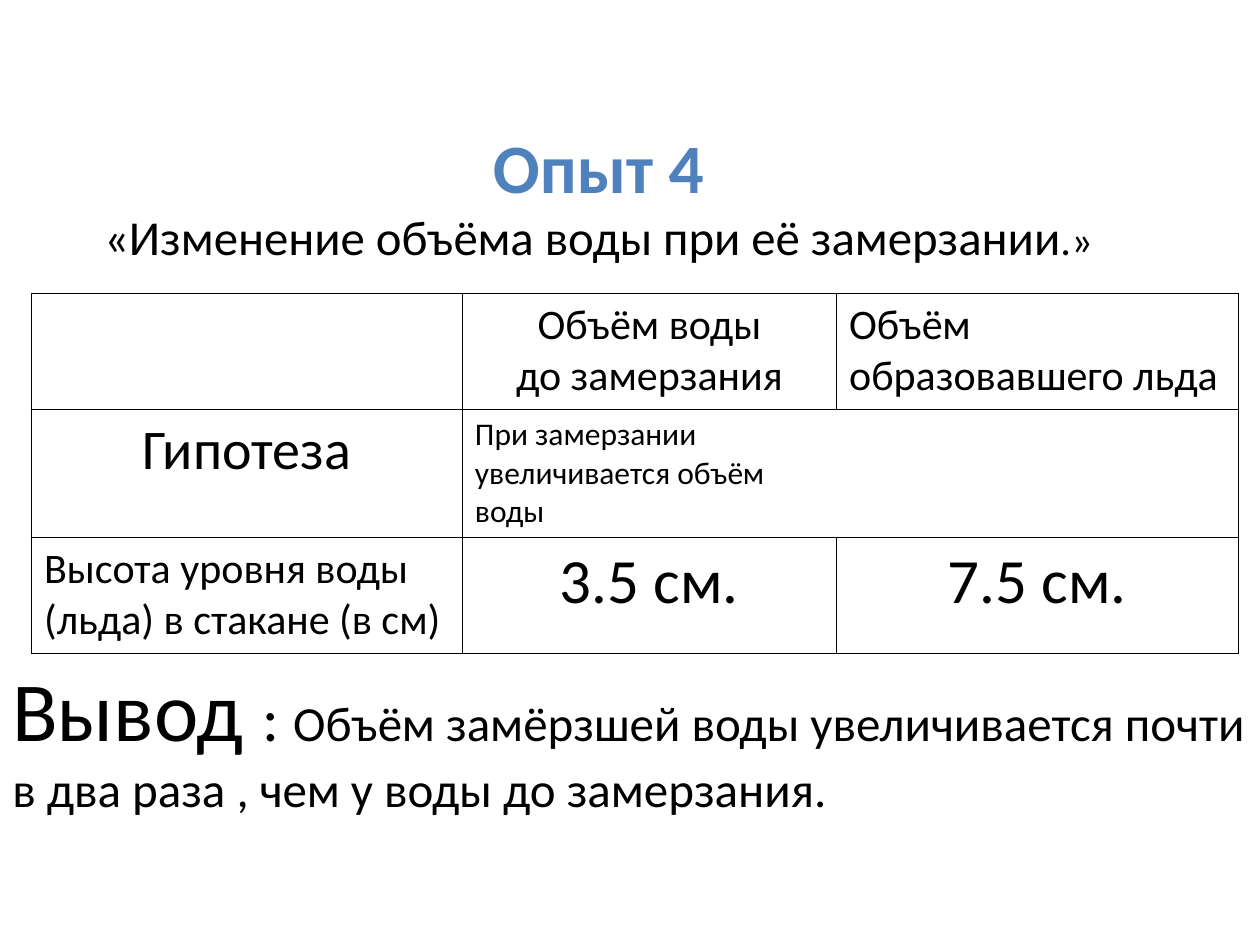
from lxml import etree
from pptx import Presentation
from pptx import util as u
from pptx.dml.color import RGBColor
from pptx.enum import text
from pptx.oxml import ns

BLACK = RGBColor(0x00, 0x00, 0x00)
BLUE = RGBColor(0x4F, 0x81, 0xBD)
FONT = "Calibri"
LEFT, CENTER = text.PP_ALIGN.LEFT, text.PP_ALIGN.CENTER


class SlideBuilder:
    def __init__(self, prs):
        self.slide = prs.slides.add_slide(prs.slide_layouts[5])

    def add_text(self, tf, paragraphs, align):
        """Each paragraph is a list of (text, size, colour, bold) runs."""
        for i, runs in enumerate(paragraphs):
            p = tf.paragraphs[0] if i == 0 else tf.add_paragraph()
            p.alignment = align
            for content, size, color, bold in runs:
                r = p.add_run()
                r.text = content
                r.font.name = FONT
                r.font.size = u.Pt(size)
                r.font.bold = bold
                r.font.color.rgb = color

    def title(self, box, paragraphs):
        sp = self.slide.shapes.title
        sp.left, sp.top, sp.width, sp.height = (u.Inches(v) for v in box)
        tf = sp.text_frame
        tf.word_wrap = True
        tf.auto_size = text.MSO_AUTO_SIZE.NONE
        tf.vertical_anchor = text.MSO_ANCHOR.MIDDLE
        self.add_text(tf, paragraphs, CENTER)

    def text_box(self, box, paragraphs):
        sp = self.slide.shapes.add_textbox(*(u.Inches(v) for v in box))
        tf = sp.text_frame
        tf.word_wrap = True
        tf.auto_size = text.MSO_AUTO_SIZE.SHAPE_TO_FIT_TEXT
        self.add_text(tf, paragraphs, LEFT)

    def borders(self, cell, hidden):
        tc_pr = cell._tc.get_or_add_tcPr()
        for side in "LRTB":
            ln = etree.SubElement(tc_pr, ns.qn(f"a:ln{side}"), w=str(u.Pt(1)))
            if side in hidden:
                etree.SubElement(ln, ns.qn("a:noFill"))
            else:
                fill = etree.SubElement(ln, ns.qn("a:solidFill"))
                etree.SubElement(fill, ns.qn("a:srgbClr"), val=str(BLACK))

    def table(self, left, top, widths, row_height, rows, hidden):
        """Each cell is (lines, size, alignment); hidden maps cells to sides."""
        frame = self.slide.shapes.add_table(
            len(rows), len(widths), u.Inches(left), u.Inches(top),
            u.Inches(sum(widths)), u.Inches(row_height * len(rows)))
        tbl = frame.table
        tbl.first_row = tbl.horz_banding = False
        for column, width in zip(tbl.columns, widths):
            column.width = u.Inches(width)
        for i, row in enumerate(rows):
            tbl.rows[i].height = u.Inches(row_height)
            for j, (lines, size, align) in enumerate(row):
                cell = tbl.cell(i, j)
                self.borders(cell, hidden.get((i, j), ""))
                cell.fill.background()
                self.add_text(cell.text_frame,
                              [[(line, size, BLACK, False)] for line in lines], align)


def main():
    prs = Presentation()
    prs.slide_width, prs.slide_height = u.Inches(10), u.Inches(7.5)
    s = SlideBuilder(prs)

    # Experiment title
    s.title((0.25, 0.92, 9, 1.25), [
        [("Опыт 4", 39.6, BLUE, True)],
        [("«Изменение объёма воды при её замерзании", 27.9, BLACK, False),
         (".»", 24.3, BLACK, False)],
    ])

    # Measurements; the hypothesis runs across two cells with no line between
    empty = ([], 18, LEFT)
    s.table(0.25, 2.33, [3.42, 2.97, 3.19], 0.92, [
        [empty,
         (["Объём воды", "до замерзания"], 24, CENTER),
         (["Объём образовавшего льда"], 24, LEFT)],
        [(["Гипотеза"], 32, CENTER),
         (["При замерзании увеличивается объём воды"], 18, LEFT),
         empty],
        [(["Высота уровня воды (льда) в стакане (в см)"], 24, LEFT),
         (["3.5 см."], 36, CENTER),
         (["7.5 см."], 36, CENTER)],
    ], hidden={(1, 1): "R", (1, 2): "L"})

    # Conclusion
    s.text_box((0, 5.17, 10, 1.38), [[
        ("Вывод ", 48, BLACK, False),
        (": ", 36, BLACK, False),
        ("Объём замёрзшей воды увеличивается почти в два раза , "
         "чем у воды до замерзания.", 28, BLACK, False),
    ]])

    prs.save("out.pptx")


if __name__ == "__main__":
    main()
